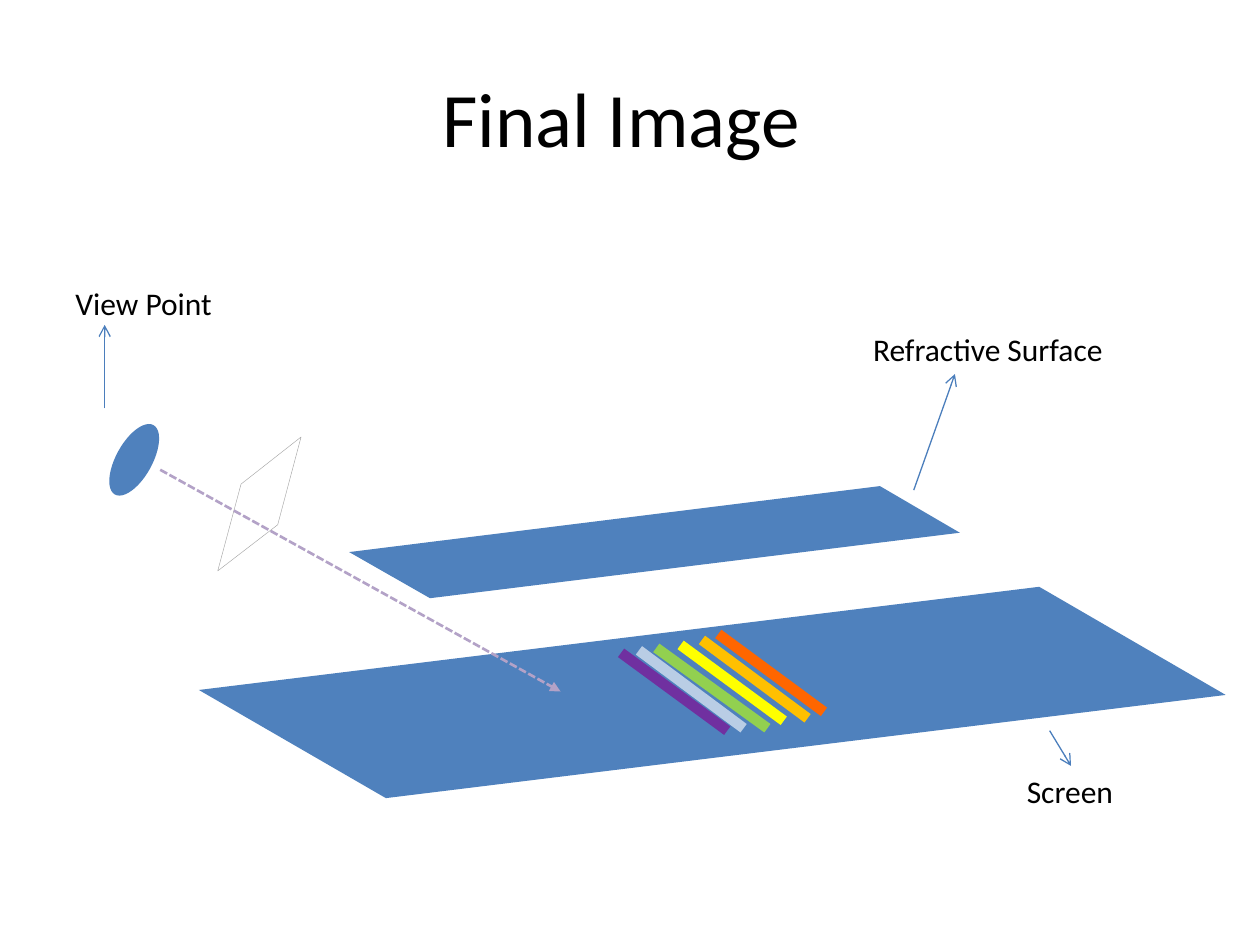
from lxml import etree
from pptx import Presentation
from pptx.dml.color import RGBColor
from pptx.enum.dml import MSO_LINE
from pptx.enum.shapes import MSO_CONNECTOR, MSO_SHAPE
from pptx.enum.text import MSO_ANCHOR, PP_ALIGN
from pptx.oxml.ns import qn
from pptx.util import Cm, Pt

OVAL = MSO_SHAPE.OVAL
LINE = MSO_CONNECTOR.STRAIGHT
DASH = MSO_LINE.SQUARE_DOT
MID, TOP = MSO_ANCHOR.MIDDLE, MSO_ANCHOR.TOP
LEFT, CENTER = PP_ALIGN.LEFT, PP_ALIGN.CENTER

BLUE = "4F81BD"
TITLE = ("Final Image ", 1.27, 0.76, 22.86, 3.18)
LABELS = [
    ("View Point", 1.27, 5.61, 3.3, 1.02),
    ("Refractive Surface", 17.35, 6.53, 5.21, 1.02),
    ("Screen", 20.45, 15.44, 2.26, 1.02),
]
SCREEN = [(4.01, 13.91), (20.95, 11.83), (24.71, 14.01), (7.78, 16.09)]
WINDOW = [(6.07, 8.81), (5.6, 10.58), (4.39, 11.51), (4.86, 9.76)]
SURFACE = [(7.04, 11.13), (17.74, 9.8), (19.35, 10.74), (8.67, 12.06)]
EYE = (2.34, 8.47, 0.73, 1.6)
RAY = (3.23, 9.47, 11.3, 13.94)
BANDS = [
    ("FFFF00", 13.72, 13, 15.8, 14.53),
    ("92D050", 13.23, 13.06, 15.47, 14.68),
    ("B9CDE5", 12.88, 13.11, 14.99, 14.68),
    ("FFC000", 14.15, 12.9, 16.28, 14.48),
    ("7030A0", 12.52, 13.16, 14.66, 14.73),
    ("FF6600", 14.48, 12.78, 16.61, 14.35),
]
ARROWS = [
    (2.11, 8.23, 2.11, 6.55),
    (18.42, 9.88, 19.25, 7.54),
    (21.16, 14.73, 21.59, 15.44),
]

deck = Presentation()
deck.slide_width, deck.slide_height = Cm(25.4), Cm(19.05)
slide = deck.slides.add_slide(deck.slide_layouts[6])
shapes = slide.shapes


def paint(fmt, color):
    fmt.solid()
    fmt.fore_color.rgb = RGBColor.from_string(color)


def add_text(text, *box, size=18, align=LEFT, anchor=TOP, wrap=False):
    frame = shapes.add_textbox(*map(Cm, box)).text_frame
    frame.word_wrap = wrap
    frame.vertical_anchor = anchor
    para = frame.paragraphs[0]
    para.text = text
    para.alignment = align
    para.font.size = Pt(size)
    para.font.name = "Calibri"
    para.font.color.rgb = RGBColor.from_string("000000")


def add_plane(points, color, edge=None):
    nodes = [(Cm(x), Cm(y)) for x, y in points]
    pen = shapes.build_freeform(*nodes[0])
    pen.add_line_segments(nodes[1:], close=True)
    plane = pen.convert_to_shape()
    plane.shadow.inherit = False
    paint(plane.fill, color)
    if edge:
        paint(plane.line.fill, edge)
        plane.line.width = Pt(0.25)
    else:
        plane.line.fill.background()


def add_line(ends, color, width, head=None, dash=None):
    line = shapes.add_connector(LINE, *map(Cm, ends))
    paint(line.line.fill, color)
    line.line.width = Pt(width)
    if dash:
        line.line.dash_style = dash
    if head:
        etree.SubElement(line.line._get_or_add_ln(), qn("a:tailEnd"), type=head)
    etree.SubElement(line._element.spPr, qn("a:effectLst"))


add_text(*TITLE, size=44, align=CENTER, anchor=MID, wrap=True)
add_plane(SCREEN, BLUE)
eye = shapes.add_shape(OVAL, *map(Cm, EYE))
eye.rotation = 29
eye.shadow.inherit = False
paint(eye.fill, BLUE)
eye.line.fill.background()
add_plane(WINDOW, "FFFFFF", "A6A6A6")
add_line(RAY, "B3A2C7", 1.5, "triangle", DASH)
for color, *ends in BANDS:
    add_line(ends, color, 6)
add_plane(SURFACE, BLUE)
for ends in ARROWS:
    add_line(ends, "4B7EBC", 0.75, "arrow")
for label in LABELS:
    add_text(*label)

deck.save("out.pptx")
